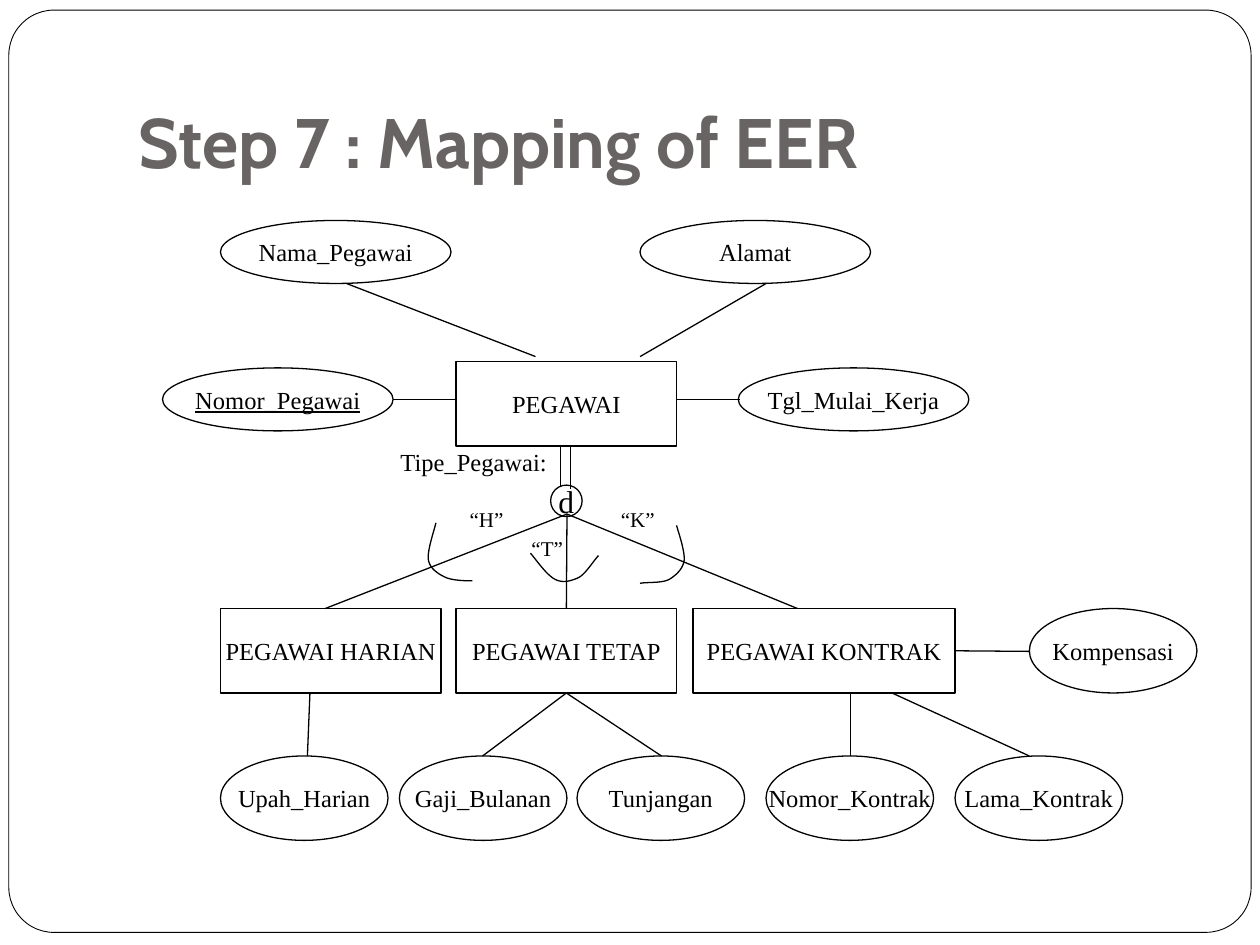
from dataclasses import dataclass

from lxml import etree
from pptx import Presentation
from pptx.dml.color import RGBColor
from pptx.enum import shapes, text
from pptx.oxml import ns
from pptx.util import Inches, Pt

TOP, LEFT, BOTTOM, RIGHT = range(4)


@dataclass(frozen=True)
class Theme:
    ink: str = "000000"
    paper: str = "FFFFFF"
    heading: str = "696464"
    heading_font: str = "Cabin"
    body_font: str = "Times New Roman"
    heading_size: float = 40
    symbol_size: float = 18
    body_size: float = 14
    small_size: float = 12
    line_width: float = 0.75
    frame_width: float = 0.5


def write_text(frame, content, *, font, size, color, bold=False, underline=False, align=None):
    para = frame.paragraphs[0]
    para.alignment = align
    span = para.add_run()
    span.text = content
    span.font.name = font
    span.font.size = Pt(size)
    span.font.bold = bold
    span.font.underline = underline
    span.font.color.rgb = RGBColor.from_string(color)


def curve_points(start, segments, steps=12):
    for first, second, end in segments:
        for step in range(1, steps + 1):
            t = step / steps
            yield tuple(
                (1 - t) ** 3 * a + 3 * (1 - t) ** 2 * t * b + 3 * (1 - t) * t**2 * c + t**3 * d
                for a, b, c, d in zip(start, first, second, end)
            )
        start = end


class Diagram:
    def __init__(self, page, theme):
        self.page = page
        self.theme = theme

    def outline(self, item, width=None):
        item.line.color.rgb = RGBColor.from_string(self.theme.ink)
        item.line.width = Pt(width or self.theme.line_width)

    def shape(self, kind, left, top, width, height):
        box = self.page.shapes.add_shape(
            kind, Inches(left), Inches(top), Inches(width), Inches(height))
        box.shadow.inherit = False
        box.fill.background()
        self.outline(box)
        return box

    def frame(self, left, top, width, height):
        box = self.shape(shapes.MSO_SHAPE.ROUNDED_RECTANGLE, left, top, width, height)
        box.adjustments[0] = 0.049
        box.fill.solid()
        box.fill.fore_color.rgb = RGBColor.from_string(self.theme.paper)
        self.outline(box, self.theme.frame_width)
        self.page.shapes._spTree.insert(2, box._element)

    def title(self, content):
        box = self.page.shapes.title
        box.left, box.top, box.width, box.height = map(Inches, (1, 0.3, 8.5, 1.25))
        frame = box.text_frame
        frame.auto_size = text.MSO_AUTO_SIZE.NONE
        frame.vertical_anchor = text.MSO_ANCHOR.BOTTOM
        frame.margin_bottom = Inches(0.1)
        write_text(frame, content, font=self.theme.heading_font, size=self.theme.heading_size,
                   color=self.theme.heading, bold=True, align=text.PP_ALIGN.LEFT)

    def node(self, kind, content, left, top, width, height, size=None, underline=False):
        box = self.shape(kind, left, top, width, height)
        frame = box.text_frame
        frame.word_wrap = False
        frame.vertical_anchor = text.MSO_ANCHOR.MIDDLE
        write_text(frame, content, font=self.theme.body_font, size=size or self.theme.body_size,
                   color=self.theme.ink, underline=underline, align=text.PP_ALIGN.CENTER)
        return box

    def entity(self, content, left, top, width=1.75):
        return self.node(shapes.MSO_SHAPE.RECTANGLE, content, left, top, width, 0.67)

    def attribute(self, content, left, top, width=1.83, height=0.5, **style):
        return self.node(shapes.MSO_SHAPE.OVAL, content, left, top, width, height, **style)

    def label(self, content, left, top, width, height, size):
        box = self.page.shapes.add_textbox(
            Inches(left), Inches(top), Inches(width), Inches(height))
        box.text_frame.word_wrap = True
        box.text_frame.auto_size = text.MSO_AUTO_SIZE.SHAPE_TO_FIT_TEXT
        write_text(box.text_frame, content, font=self.theme.body_font, size=size,
                   color=self.theme.ink)

    def line(self, start, end, begin_at=None, end_at=None):
        link = self.page.shapes.add_connector(
            shapes.MSO_CONNECTOR.STRAIGHT, *map(Inches, (*start, *end)))
        if begin_at:
            link.begin_connect(*begin_at)
        if end_at:
            link.end_connect(*end_at)
        self.outline(link)
        etree.SubElement(link._element.spPr, ns.qn("a:effectLst"))

    def arc(self, start, segments):
        builder = self.page.shapes.build_freeform(*map(Inches, start))
        builder.add_line_segments(
            [tuple(map(Inches, point)) for point in curve_points(start, segments)], close=False)
        curve = builder.convert_to_shape()
        curve.shadow.inherit = False
        curve.fill.background()
        self.outline(curve)


def main():
    deck = Presentation()
    deck.slide_width, deck.slide_height = Inches(10), Inches(7.5)
    theme = Theme()
    diagram = Diagram(deck.slides.add_slide(deck.slide_layouts[5]), theme)
    diagram.frame(0.07, 0.08, 9.86, 7.32)
    diagram.title("Step 7 : Mapping of EER")

    diagram.entity("PEGAWAI", 3.62, 2.87)
    diagram.attribute("d", 4.37, 3.85, 0.25, 0.25, size=theme.symbol_size)
    subtype_top, leaf_top = 4.83, 6
    diagram.entity("PEGAWAI HARIAN", 1.75, subtype_top)
    permanent = diagram.entity("PEGAWAI TETAP", 3.62, subtype_top)
    contract = diagram.entity("PEGAWAI KONTRAK", 5.5, subtype_top, 2.08)

    diagram.attribute("Nama_Pegawai", 1.75, 1.75)
    diagram.attribute("Alamat", 5.08, 1.75)
    diagram.attribute("Nomor_Pegawai", 1.29, 2.92, underline=True)
    diagram.attribute("Tgl_Mulai_Kerja", 5.86, 2.92)
    for name, left, top in [
        ("Upah_Harian", 1.75, leaf_top),
        ("Gaji_Bulanan", 3.17, leaf_top),
        ("Tunjangan", 4.58, leaf_top),
        ("Nomor_Kontrak", 6.08, leaf_top),
        ("Lama_Kontrak", 7.58, leaf_top),
        ("Kompensasi", 8.17, subtype_top),
    ]:
        diagram.attribute(name, left, top, 1.33, 0.67)

    for start, end in [
        ((2.75, 2.25), (4.25, 2.83)),
        ((6.08, 2.25), (5.08, 2.83)),
        ((3.12, 3.17), (3.62, 3.17)),
        ((5.37, 3.17), (5.87, 3.17)),
        ((4.45, 3.53), (4.45, 3.86)),
        ((4.53, 3.55), (4.53, 3.88)),
        ((2.46, 5.5), (2.44, leaf_top)),
        ((6.75, 5.5), (6.75, leaf_top)),
        ((7.08, 5.5), (8.17, leaf_top)),
    ]:
        diagram.line(start, end)

    split = (4.5, 4.08)
    diagram.line(split, (2.58, subtype_top))
    diagram.line(split, (4.5, subtype_top), end_at=(permanent, TOP))
    diagram.line(split, (6.33, subtype_top))
    for leaf_middle in (3.83, 5.25):
        diagram.line((4.5, 5.5), (leaf_middle, leaf_top), begin_at=(permanent, BOTTOM))
    diagram.line((7.58, 5.17), (8.17, 5.17), begin_at=(contract, RIGHT))

    diagram.arc((3.46, 4.15), [
        ((3.45, 4.2), (3.39, 4.37), (3.4, 4.44)),
        ((3.41, 4.51), (3.47, 4.55), (3.53, 4.58)),
        ((3.59, 4.61), (3.7, 4.61), (3.75, 4.61)),
    ])
    diagram.arc((4.21, 4.39), [
        ((4.24, 4.42), (4.34, 4.57), (4.41, 4.6)),
        ((4.47, 4.63), (4.54, 4.61), (4.6, 4.58)),
        ((4.65, 4.55), (4.72, 4.44), (4.75, 4.41)),
    ])
    diagram.arc((5.37, 4.17), [
        ((5.38, 4.21), (5.44, 4.38), (5.43, 4.45)),
        ((5.42, 4.52), (5.36, 4.57), (5.31, 4.6)),
        ((5.25, 4.63), (5.13, 4.62), (5.08, 4.63)),
    ])

    diagram.label("Tipe_Pegawai:", 3.08, 3.5, 2.08, 0.33, theme.body_size)
    for content, left, top in [("“H”", 3.63, 3.97), ("“K”", 4.83, 3.97), ("“T”", 4.12, 4.2)]:
        diagram.label(content, left, top, 0.5, 0.3, theme.small_size)

    deck.save("out.pptx")


if __name__ == "__main__":
    main()
